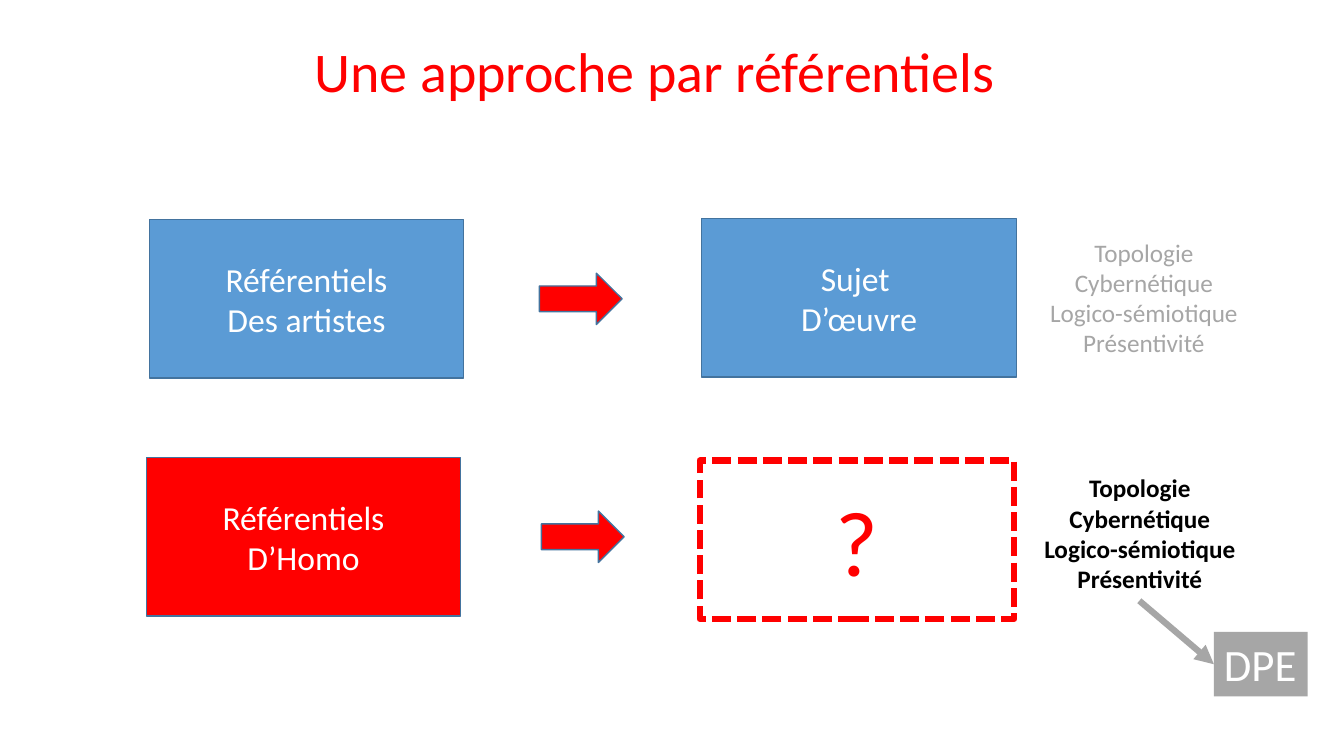
"""Builds a slide comparing the reference frames of artists and of Homo."""
from dataclasses import dataclass
from typing import Optional

from lxml import etree
from pptx import Presentation
from pptx import util as u
from pptx.dml.color import RGBColor
from pptx.enum import dml, shapes, text
from pptx.oxml import ns

COLORS = {
    "red": "FF0000",
    "blue": "5B9BD5",
    "edge": "43739E",
    "gray": "A6A6A6",
    "white": "FFFFFF",
    "black": "000000",
}
FONT = "Calibri"
BOX_W, BOX_H = 3.12, 1.57
ARROW_W, ARROW_H = 0.82, 0.51
TOPICS = ("Topologie", "Cybernétique", "Logico-sémiotique", "Présentivité")


@dataclass(frozen=True)
class Box:
    left: float
    top: float
    lines: tuple[str, ...]
    fill: Optional[str] = "blue"
    line: str = "edge"
    line_pt: float = 1
    dashed: bool = False
    size: float = 24
    color: str = "white"


@dataclass(frozen=True)
class Label:
    left: float
    top: float
    width: float
    height: float
    lines: tuple[str, ...]
    size: float
    color: str
    bold: bool = False
    centered: bool = False
    fill: Optional[str] = None


BOXES = (
    Box(1.48, 2.18, ("Référentiels", "Des artistes")),
    Box(6.96, 2.17, ("Sujet ", "D’œuvre")),
    Box(1.45, 4.54, ("Référentiels", "D’Homo"), fill="red"),
    Box(6.94, 4.57, ("?",), fill=None, line="red", line_pt=4.5,
        dashed=True, size=66, color="red"),
)
ARROWS = ((5.35, 2.71), (5.37, 5.07))
LABELS = (
    Label(3.02, 0.31, 7.28, 0.77, ("Une approche par référentiels",), 40, "red"),
    Label(10.25, 4.64, 2.11, 1.31, TOPICS, 18, "black", bold=True, centered=True),
    Label(10.3, 2.3, 2.09, 1.31, TOPICS, 18, "gray", centered=True),
    Label(12.04, 6.27, 0.93, 0.64, ("DPE",), 32, "white", fill="gray"),
)


def rgb(name: str) -> RGBColor:
    return RGBColor.from_string(COLORS[name])


def write(tf, lines: tuple[str, ...], *, size: float, color: str,
          bold: bool = False, centered: bool = True) -> None:
    for i, line in enumerate(lines):
        p = tf.paragraphs[0] if i == 0 else tf.add_paragraph()
        p.alignment = text.PP_ALIGN.CENTER if centered else text.PP_ALIGN.LEFT
        r = p.add_run()
        r.text = line
        r.font.name = FONT
        r.font.size = u.Pt(size)
        r.font.bold = bold
        r.font.color.rgb = rgb(color)


def paint(sp, fill: Optional[str], line: str, line_pt: float) -> None:
    sp.shadow.inherit = False
    if fill:
        sp.fill.solid()
        sp.fill.fore_color.rgb = rgb(fill)
    else:
        sp.fill.background()
    sp.line.color.rgb = rgb(line)
    sp.line.width = u.Pt(line_pt)


def add_box(s, box: Box) -> None:
    sp = s.shapes.add_shape(
        shapes.MSO_SHAPE.RECTANGLE, u.Inches(box.left), u.Inches(box.top),
        u.Inches(BOX_W), u.Inches(BOX_H))
    paint(sp, box.fill, box.line, box.line_pt)
    if box.dashed:
        sp.line.dash_style = dml.MSO_LINE.SQUARE_DOT
    tf = sp.text_frame
    tf.vertical_anchor = text.MSO_ANCHOR.MIDDLE
    write(tf, box.lines, size=box.size, color=box.color)


def add_arrow(s, left: float, top: float) -> None:
    sp = s.shapes.add_shape(
        shapes.MSO_SHAPE.RIGHT_ARROW, u.Inches(left), u.Inches(top),
        u.Inches(ARROW_W), u.Inches(ARROW_H))
    paint(sp, "red", "edge", 1)


def add_label(s, label: Label) -> None:
    sp = s.shapes.add_textbox(
        u.Inches(label.left), u.Inches(label.top),
        u.Inches(label.width), u.Inches(label.height))
    if label.fill:
        sp.fill.solid()
        sp.fill.fore_color.rgb = rgb(label.fill)
    tf = sp.text_frame
    tf.word_wrap = False
    tf.auto_size = text.MSO_AUTO_SIZE.SHAPE_TO_FIT_TEXT
    write(tf, label.lines, size=label.size, color=label.color,
          bold=label.bold, centered=label.centered)


def add_pointer(s, start: tuple[float, float], end: tuple[float, float]) -> None:
    cx = s.shapes.add_connector(
        shapes.MSO_CONNECTOR.STRAIGHT, *map(u.Inches, start + end))
    cx.line.color.rgb = rgb("gray")
    cx.line.width = u.Pt(4.5)
    etree.SubElement(cx.line._get_or_add_ln(), ns.qn("a:tailEnd"), type="triangle")
    etree.SubElement(cx._element.spPr, ns.qn("a:effectLst"))


def main() -> None:
    prs = Presentation()
    prs.slide_width, prs.slide_height = u.Inches(13.33), u.Inches(7.5)
    s = prs.slides.add_slide(prs.slide_layouts[6])
    for box in BOXES:
        add_box(s, box)
    for left, top in ARROWS:
        add_arrow(s, left, top)
    for label in LABELS:
        add_label(s, label)
    add_pointer(s, (11.3, 5.96), (12.04, 6.59))
    prs.save("out.pptx")


if __name__ == "__main__":
    main()
